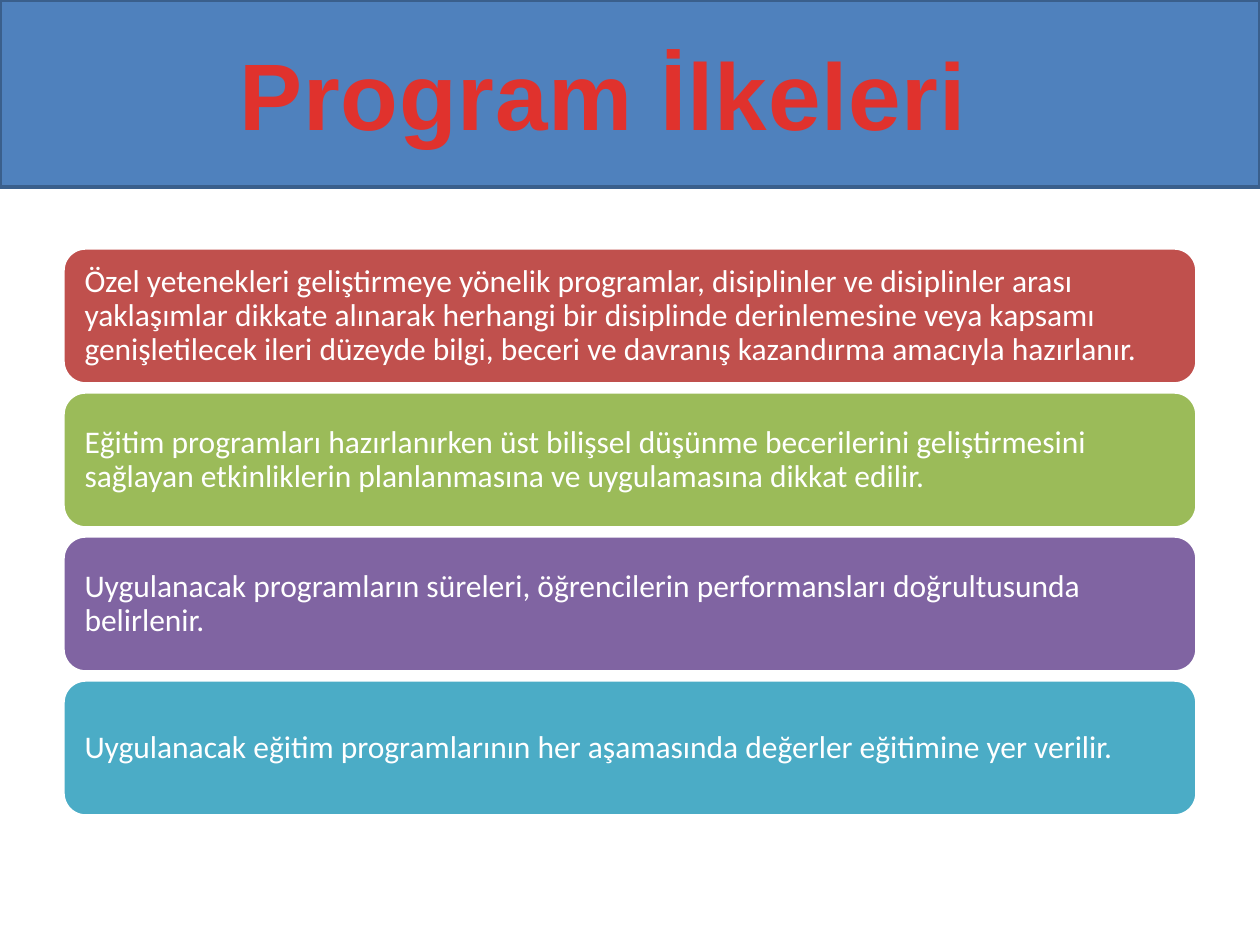
"""Build the programme principles slide: a title band over four coloured boxes."""
import pptx
import pptx.dml.color
import pptx.enum.shapes
import pptx.enum.text
import pptx.util

PX = 914400 / 126
COLORS = {
    "white": "FFFFFF", "band": "4F81BD", "band_line": "3A5F8C",
    "red": "C0504D", "green": "9BBB59", "purple": "8064A2", "aqua": "4BACC6",
    "title_top": "E0322D", "title_bottom": "A2201C",
}
TITLE = "Program İlkeleri"
PRINCIPLES = [
    ("red", "Özel yetenekleri geliştirmeye yönelik programlar, disiplinler ve disiplinler arası "
            "yaklaşımlar dikkate alınarak herhangi bir disiplinde derinlemesine veya kapsamı "
            "genişletilecek ileri düzeyde bilgi, beceri ve davranış kazandırma amacıyla hazırlanır."),
    ("green", "Eğitim programları hazırlanırken üst bilişsel düşünme becerilerini geliştirmesini "
              "sağlayan etkinliklerin planlanmasına ve uygulamasına dikkat edilir."),
    ("purple", "Uygulanacak programların süreleri, öğrencilerin performansları doğrultusunda belirlenir."),
    ("aqua", "Uygulanacak eğitim programlarının her aşamasında değerler eğitimine yer verilir."),
]
BOX_LEFT, BOX_TOP, BOX_WIDTH, BOX_HEIGHT, BOX_GAP = 63, 248, 1134, 136, 8
SHAPES = pptx.enum.shapes.MSO_SHAPE
ALIGN = pptx.enum.text.PP_ALIGN
MIDDLE = pptx.enum.text.MSO_ANCHOR.MIDDLE


def px(n):
    return pptx.util.Emu(round(n * PX))


def rgb(name):
    return pptx.dml.color.RGBColor.from_string(COLORS[name])


def apply(obj, formats):
    for name, value in formats.items():
        setattr(obj, name, value)


def add_box(s, kind, at, fill, line):
    sp = s.shapes.add_shape(kind, *map(px, at))
    sp.shadow.inherit = False
    sp.fill.solid()
    sp.fill.fore_color.rgb = rgb(fill)
    sp.line.color.rgb = rgb(line)
    sp.line.width = pptx.util.Pt(2)
    return sp


def write(sp, text, frame, paragraph, font):
    tf = sp.text_frame
    apply(tf, frame)
    p = tf.paragraphs[0]
    apply(p, paragraph)
    r = p.add_run()
    r.text = text
    apply(r.font, font)
    return r


def add_principles(s):
    frame = {"word_wrap": True, "vertical_anchor": MIDDLE, "margin_left": px(15),
             "margin_right": px(15), "margin_top": px(16), "margin_bottom": px(16)}
    paragraph = {"alignment": ALIGN.LEFT, "line_spacing": 0.9}
    font = {"name": "Calibri", "size": pptx.util.Pt(18)}
    for i, (color, text) in enumerate(PRINCIPLES):
        top = BOX_TOP + i * (BOX_HEIGHT + BOX_GAP)
        sp = add_box(s, SHAPES.ROUNDED_RECTANGLE, (BOX_LEFT, top, BOX_WIDTH, BOX_HEIGHT),
                     color, "white")
        r = write(sp, text, frame, paragraph, font)
        r.font.color.rgb = rgb("white")


def add_title(s):
    add_box(s, SHAPES.RECTANGLE, (0, 0, 1260, 187), "band", "band_line")
    sp = s.shapes.add_textbox(*map(px, (223, 30, 761, 127)))
    frame = {"word_wrap": False, "auto_size": pptx.enum.text.MSO_AUTO_SIZE.SHAPE_TO_FIT_TEXT}
    font = {"name": "Arial", "size": pptx.util.Pt(54), "bold": True}
    r = write(sp, TITLE, frame, {"alignment": ALIGN.CENTER}, font)
    fill = r.font.fill
    fill.gradient()
    fill.gradient_angle = 270
    stops = ((0.25, "title_top"), (1, "title_bottom"))
    for stop, (position, color) in zip(fill.gradient_stops, stops):
        stop.position = position
        stop.color.rgb = rgb(color)
    r.font._element.set("spc", "50")


def main():
    prs = pptx.Presentation()
    apply(prs, {"slide_width": px(1260), "slide_height": px(945)})
    s = prs.slides.add_slide(prs.slide_layouts[6])
    add_principles(s)
    add_title(s)
    prs.save("out.pptx")


if __name__ == "__main__":
    main()
